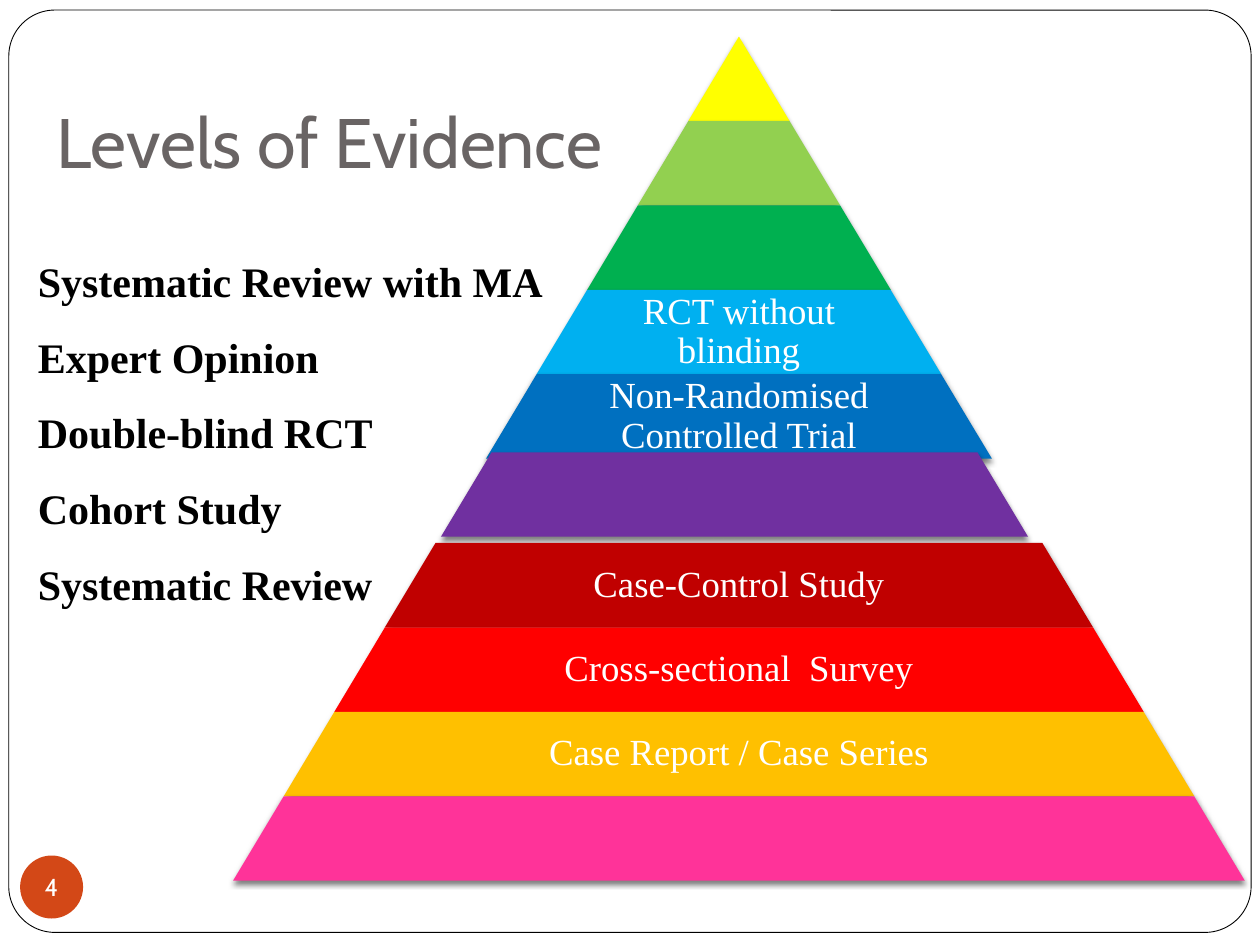
from dataclasses import dataclass

from lxml import etree
from pptx import Presentation
from pptx.dml.color import RGBColor
from pptx.enum.shapes import MSO_SHAPE
from pptx.enum.text import MSO_ANCHOR, MSO_AUTO_SIZE, PP_ALIGN
from pptx.oxml.ns import qn
from pptx.util import Inches, Pt

ROUNDED, TRAPEZOID, OVAL = MSO_SHAPE.ROUNDED_RECTANGLE, MSO_SHAPE.TRAPEZOID, MSO_SHAPE.OVAL
TOP, MIDDLE, BOTTOM = MSO_ANCHOR.TOP, MSO_ANCHOR.MIDDLE, MSO_ANCHOR.BOTTOM
LEFT, CENTER = PP_ALIGN.LEFT, PP_ALIGN.CENTER
FIT_TEXT = MSO_AUTO_SIZE.SHAPE_TO_FIT_TEXT
NO_FIT = MSO_AUTO_SIZE.NONE


@dataclass(frozen=True)
class Theme:
    """Colours, fonts and type sizes of the deck."""
    heading_font: str = "Cabin"
    text_font: str = "Times New Roman"
    title_size: int = 40
    list_size: int = 24
    tier_size: int = 21
    number_size: int = 14
    grey: str = "696464"
    black: str = "000000"
    white: str = "FFFFFF"
    accent: str = "D34817"


@dataclass(frozen=True)
class Box:
    """A rectangle in inches."""
    left: float
    top: float
    width: float
    height: float

    def emu(self):
        """Return the sides as lengths for python-pptx."""
        return [Inches(side) for side in (self.left, self.top, self.width, self.height)]


THEME = Theme()
SLIDE = Box(0, 0, 10, 7.5)
TIERS = [
    ("FFFF00", ""),
    ("92D050", ""),
    ("00B050", ""),
    ("00B0F0", "RCT without blinding"),
    ("0070C0", "Non-Randomised Controlled Trial"),
    ("7030A0", ""),
    ("C00000", "Case-Control Study"),
    ("FF0000", "Cross-sectional  Survey"),
    ("FFC000", "Case Report / Case Series"),
    ("FF3399", ""),
]
DETACHED_TIERS = {5: Box(3.5, 3.59, 4.66, 0.67)}
CHOICES = ["Systematic Review with MA", "Expert Opinion", "Double-blind RCT",
           "Cohort Study", "Systematic Review"]


def place(shape, box):
    """Move and size a shape to a box."""
    shape.left, shape.top, shape.width, shape.height = box.emu()


def add_solid(slide, kind, box, color):
    """Add a borderless preset shape with a solid fill."""
    solid = slide.shapes.add_shape(kind, *box.emu())
    solid.shadow.inherit = False
    solid.fill.solid()
    solid.fill.fore_color.rgb = RGBColor.from_string(color)
    solid.line.fill.background()
    return solid


def write(frame, lines, font, size, color, align=LEFT, anchor=TOP,
          insets=(0.1, 0.05, 0.1, 0.05), spacing=1.0, bold=False, wrap=True, fit=NO_FIT):
    """Fill a text frame with evenly formatted paragraphs."""
    frame.text = "\n".join(lines)
    frame.word_wrap, frame.auto_size, frame.vertical_anchor = wrap, fit, anchor
    (frame.margin_left, frame.margin_top,
     frame.margin_right, frame.margin_bottom) = map(Inches, insets)
    for paragraph in frame.paragraphs:
        paragraph.alignment, paragraph.line_spacing = align, spacing
        paragraph.space_before = Pt(0)
        paragraph.font.name, paragraph.font.size = font, Pt(size)
        paragraph.font.bold = bold
        paragraph.font.color.rgb = RGBColor.from_string(color)


def cast_shadow(shape):
    """Give a shape a soft shadow straight below it."""
    effects = shape._element.spPr.find(qn("a:effectLst"))
    shadow = etree.SubElement(effects, qn("a:outerShdw"), blurRad=str(Pt(3)),
                              dist=str(Pt(2)), dir="5400000", rotWithShape="0")
    color = etree.SubElement(shadow, qn("a:srgbClr"), val=THEME.black)
    etree.SubElement(color, qn("a:alpha"), val="50000")


def add_frame(slide, box):
    """Draw the rounded border behind everything else."""
    border = add_solid(slide, ROUNDED, box, THEME.white)
    border.adjustments[0] = 0.05
    border.line.color.rgb = RGBColor.from_string(THEME.black)
    border.line.width = Pt(0.5)
    slide.shapes._spTree.insert(2, border._element)


def add_title(slide, box):
    """Set the slide title."""
    title = slide.shapes.title
    place(title, box)
    write(title.text_frame, ["Levels of Evidence"], THEME.heading_font, THEME.title_size,
          THEME.grey, anchor=BOTTOM, insets=(0.1, 0.05, 0.1, 0.1))


def add_tier(slide, box, color, label):
    """Draw one pyramid tier with its label in the middle 65 % of its width."""
    tier = add_solid(slide, TRAPEZOID, box, color)
    tier.adjustments[0] = 0.6
    cast_shadow(tier)
    if label:
        share = 0.65
        label_box = Box(box.left + box.width * (1 - share) / 2, box.top,
                        box.width * share, box.height)
        text = slide.shapes.add_textbox(*label_box.emu())
        write(text.text_frame, [label], THEME.text_font, THEME.tier_size, THEME.white,
              align=CENTER, anchor=MIDDLE, insets=(0.03,) * 4, spacing=0.9)


def add_pyramid(slide, box):
    """Stack the tiers, each wider than the last by an equal step."""
    step, height = box.width / len(TIERS), box.height / len(TIERS)
    for row, (color, label) in enumerate(TIERS):
        width = step * (row + 1)
        stacked = Box(box.left + (box.width - width) / 2, box.top + row * height, width, height)
        add_tier(slide, DETACHED_TIERS.get(row, stacked), color, label)


def add_choices(slide, box):
    """List the study types to be placed in the pyramid."""
    choices = slide.placeholders[1]
    place(choices, box)
    write(choices.text_frame, CHOICES, THEME.text_font, THEME.list_size, THEME.black,
          spacing=1.5, bold=True, fit=FIT_TEXT)
    for paragraph in choices.text_frame.paragraphs:
        properties = paragraph._p.get_or_add_pPr()
        properties.set("marL", "0")
        properties.set("indent", "0")
        bullet = etree.Element(qn("a:buNone"))
        properties.find(qn("a:defRPr")).addprevious(bullet)


def add_page_number(slide, box):
    """Show the page number in a disc."""
    disc = add_solid(slide, OVAL, box, THEME.accent)
    write(disc.text_frame, ["4"], THEME.heading_font, THEME.number_size, THEME.white,
          align=CENTER, anchor=MIDDLE, insets=(0,) * 4, wrap=False)


def main():
    """Build and save the slide."""
    deck = Presentation()
    deck.slide_width, deck.slide_height = Inches(SLIDE.width), Inches(SLIDE.height)
    slide = deck.slides.add_slide(deck.slide_layouts[1])
    add_frame(slide, Box(0.07, 0.08, 9.86, 7.32))
    add_title(slide, Box(0.35, 0.3, 9.15, 1.25))
    add_pyramid(slide, Box(1.85, 0.29, 8.03, 6.7))
    add_page_number(slide, Box(0.16, 6.79, 0.5, 0.5))
    add_choices(slide, Box(0.2, 1.78, 4.49, 3.08))
    deck.save("out.pptx")


if __name__ == "__main__":
    main()
